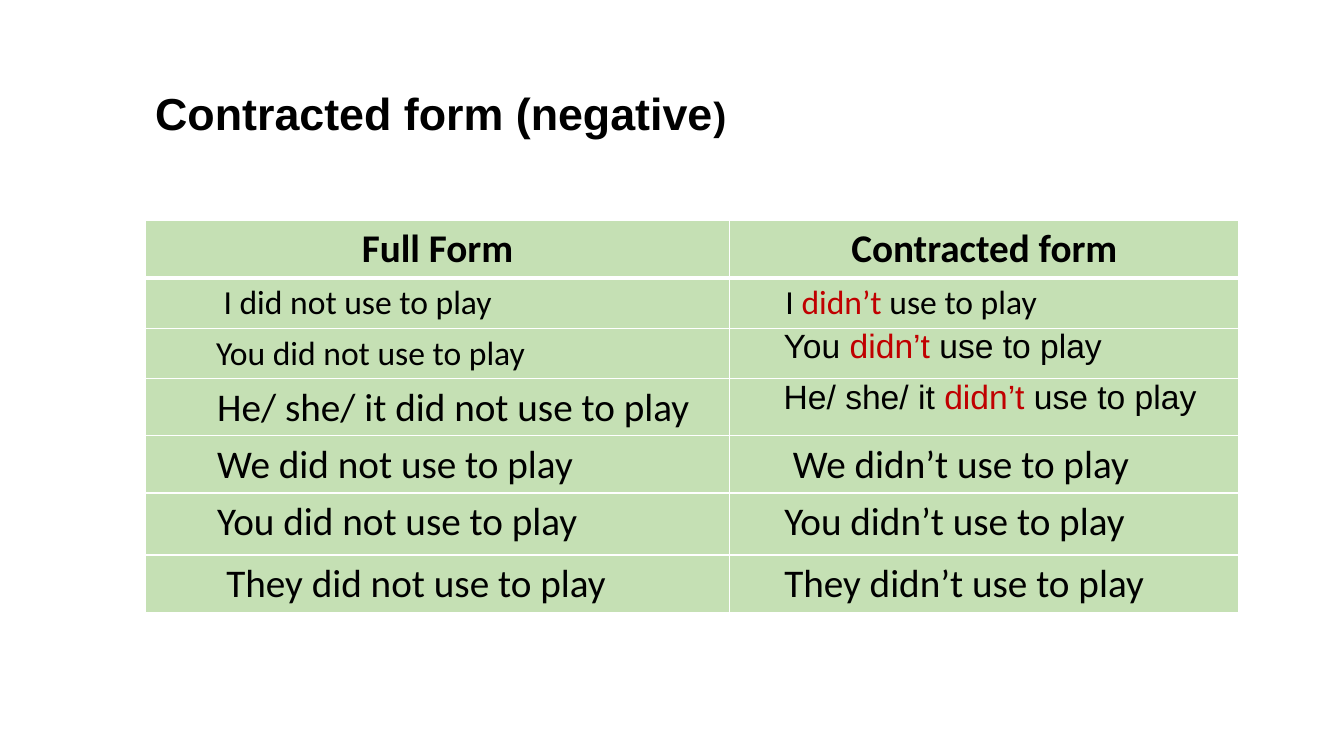
from lxml.etree import SubElement
from pptx import Presentation
from pptx.dml.color import RGBColor
from pptx.enum.text import MSO_AUTO_SIZE, PP_ALIGN
from pptx.oxml.ns import qn
from pptx.util import Cm, Pt

BLACK, RED, GREEN, WHITE = "000000", "C00000", "C5E0B4", "FFFFFF"
HEADERS = ["Full Form", "Contracted form"]
COLUMN_WIDTHS = [14.73, 12.83]
ROW_HEIGHTS = [1.44, 1.26, 1.26, 1.44, 1.44, 1.56, 1.44]
EMPHASIS = "didn’t"

# One sentence per cell: text, font, size, indent in cm, red contraction
SENTENCES = [
    [("I did not use to play", "Calibri", 24, 1.72, False),
     ("I didn’t use to play", "Calibri", 24, 1.15, True)],
    [("You did not use to play", "Calibri", 24, 1.53, False),
     ("You didn’t use to play", "Arial", 24, 1.18, True)],
    [("He/ she/ it did not use to play", "Calibri", 28, 1.56, False),
     ("He/ she/ it didn’t use to play", "Arial", 24, 1.18, True)],
    [("We did not use to play", "Calibri", 28, 1.56, False),
     ("We didn’t use to play", "Calibri", 28, 1.34, False)],
    [("You did not use to play", "Calibri", 28, 1.56, False),
     ("You didn’t use to play", "Calibri", 28, 1.12, False)],
    [("They did not use to play", "Calibri", 28, 1.79, False),
     ("They didn’t use to play", "Calibri", 28, 1.12, False)],
]


def color(value):
    return RGBColor.from_string(value)


class SlideBuilder:
    def __init__(self, page):
        self.page = page

    def span(self, para, text, font, size, bold=False, ink=BLACK):
        span = para.add_run()
        span.text = text
        span.font.name = font
        span.font.size = Pt(size)
        span.font.bold = bold
        span.font.color.rgb = color(ink)

    def title(self, left, top, width, height, pieces):
        box = self.page.shapes.add_textbox(Cm(left), Cm(top), Cm(width), Cm(height))
        frame = box.text_frame
        frame.word_wrap = False
        frame.auto_size = MSO_AUTO_SIZE.SHAPE_TO_FIT_TEXT
        for text, size in pieces:
            self.span(frame.paragraphs[0], text, "Arial", size, bold=True)

    def table(self, left, top, widths, heights):
        table = self.page.shapes.add_table(
            len(heights), len(widths), Cm(left), Cm(top),
            Cm(sum(widths)), Cm(sum(heights))).table
        table.first_row = table.horz_banding = False
        for column, width in zip(table.columns, widths):
            column.width = Cm(width)
        for row, height in zip(table.rows, heights):
            row.height = Cm(height)
        return table

    def cell_style(self, cell, top_line, bottom_line):
        properties = cell._tc.get_or_add_tcPr()
        lines = {"a:lnL": 1, "a:lnR": 1, "a:lnT": top_line, "a:lnB": bottom_line}
        for tag, weight in lines.items():
            line = SubElement(properties, qn(tag), w=str(Pt(weight)))
            SubElement(SubElement(line, qn("a:solidFill")), qn("a:srgbClr"), val=WHITE)
        cell.fill.solid()
        cell.fill.fore_color.rgb = color(GREEN)

    def header(self, cell, text):
        self.cell_style(cell, 1, 3)
        para = cell.text_frame.paragraphs[0]
        para.alignment = PP_ALIGN.CENTER
        self.span(para, text, "Calibri", 28, bold=True)

    def sentence(self, cell, top_line, text, font, size, indent, emphasised):
        self.cell_style(cell, top_line, 1)
        if font == "Arial":
            cell.margin_left = cell.margin_right = Cm(0.18)
            cell.margin_top = cell.margin_bottom = 0
        para = cell.text_frame.paragraphs[0]
        margin = para._p.get_or_add_pPr()
        margin.set("marL", str(Cm(indent)))
        margin.set("indent", "0")
        pieces = text.partition(EMPHASIS) if emphasised else [text]
        for piece in pieces:
            ink = RED if piece == EMPHASIS else BLACK
            self.span(para, piece, font, size, ink=ink)


def main():
    deck = Presentation()
    deck.slide_width, deck.slide_height = Cm(33.87), Cm(19.05)
    builder = SlideBuilder(deck.slides.add_slide(deck.slide_layouts[6]))

    # Title
    builder.title(3.66, 2.03, 15.01, 1.63,
                  [("Contracted form (negative", 32), (")", 28)])

    # Table of full and contracted forms
    table = builder.table(3.66, 5.56, COLUMN_WIDTHS, ROW_HEIGHTS)
    for column, text in enumerate(HEADERS):
        builder.header(table.cell(0, column), text)
    for row, sentences in enumerate(SENTENCES, start=1):
        top_line = 3 if row == 1 else 1
        for column, sentence in enumerate(sentences):
            builder.sentence(table.cell(row, column), top_line, *sentence)

    deck.save("out.pptx")


if __name__ == "__main__":
    main()
